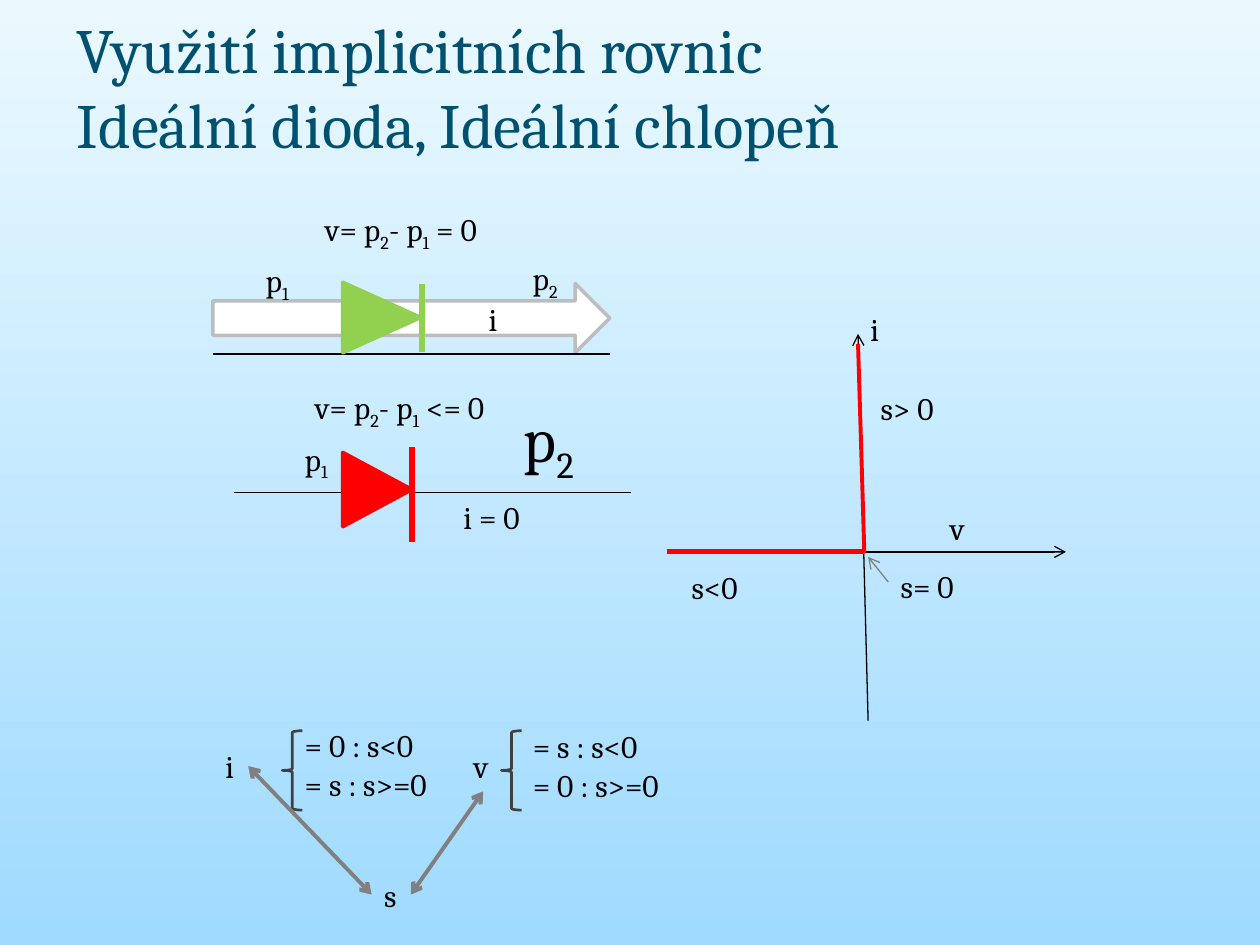
from lxml import etree
from pptx import Presentation
from pptx.dml.color import RGBColor
from pptx.enum.shapes import MSO_CONNECTOR, MSO_SHAPE
from pptx.enum.text import MSO_ANCHOR, MSO_AUTO_SIZE
from pptx.oxml.ns import qn
from pptx.util import Inches, Pt

FONT = "Cambria"
BLACK, GRAY, RED, GREEN = "000000", "808080", "FF0000", "92D050"
TOP, LEFT, BOTTOM, RIGHT = range(4)
TEXT_HEIGHT = 0.4

TITLE = "Využití implicitních rovnic \vIdeální dioda, Ideální chlopeň"

# text (an underscore lowers the next character), left, top, width, wrapped
LABELS = [
    ("p_1", 2.01, 2.02, 0.42, False),
    ("p_2", 4.13, 2.01, 0.44, False),
    ("i", 3.78, 2.33, 0.28, False),
    ("v= p_2- p_1 = 0", 2.48, 1.62, 1.6, False),
    ("p_1", 2.32, 3.44, 0.42, False),
    ("i = 0", 3.58, 3.9, 0.72, False),
    ("v= p_2- p_1 <= 0", 2.4, 3.03, 1.77, False),
    ("i", 6.81, 2.41, 0.55, True),
    ("v", 7.44, 3.99, 0.55, True),
    ("s<0", 5.39, 4.46, 1.65, True),
    ("s> 0", 6.89, 3.04, 1.65, True),
    ("s= 0", 7.05, 4.45, 1.65, True),
]

# left of brace, left, top and width of the text, the two cases
CASES = [
    (2.24, 2.32, 5.71, 1.34, ("= 0 : s<0", "= s : s>=0")),
    (3.98, 4.13, 5.72, 2.05, ("= s : s<0", "= 0 : s>=0")),
]
CASE_PITCH = 0.31

# start, end, colour, width, arrowhead at start, arrowhead at end
LINES = [
    ((1.69, 2.81), (4.84, 2.81), BLACK, 0.75, False, False),
    ((1.86, 3.91), (5.01, 3.91), BLACK, 0.75, False, False),
    ((3.27, 3.55), (3.27, 4.3), RED, 3, False, False),
    ((3.35, 2.25), (3.35, 2.79), GREEN, 3, False, False),
    ((6.81, 2.65), (6.89, 5.72), BLACK, 0.75, True, False),
    ((5.31, 4.38), (8.46, 4.38), BLACK, 0.75, False, True),
    ((5.29, 4.38), (6.86, 4.38), RED, 3, False, False),
    ((6.86, 4.39), (6.81, 2.73), RED, 2.25, False, False),
    ((7.05, 4.62), (6.89, 4.42), GRAY, 0.75, False, True),
]

# left, top, width, height before the quarter turn, colour
DIODES = [
    (2.75, 2.21, 0.56, 0.62, GREEN),
    (2.7, 3.61, 0.59, 0.55, RED),
]


def rgb(value):
    return RGBColor.from_string(value)


def add_shape(slide, kind, box, fill, line, width):
    shape = slide.shapes.add_shape(kind, *map(Inches, box))
    shape.shadow.inherit = False
    if fill:
        shape.fill.solid()
        shape.fill.fore_color.rgb = rgb(fill)
    else:
        shape.fill.background()
    shape.line.color.rgb = rgb(line)
    shape.line.width = Pt(width)
    return shape


def add_line(slide, start, end, color, width, head=False, tail=False):
    connector = slide.shapes.add_connector(
        MSO_CONNECTOR.STRAIGHT, *map(Inches, start + end))
    connector.line.color.rgb = rgb(color)
    connector.line.width = Pt(width)
    outline = connector.line._get_or_add_ln()
    for tag, wanted in (("a:headEnd", head), ("a:tailEnd", tail)):
        if wanted:
            etree.SubElement(outline, qn(tag), type="arrow")
    etree.SubElement(connector._element.spPr, qn("a:effectLst"))
    return connector


def add_text(slide, text, left, top, width, wrapped=True,
             height=TEXT_HEIGHT, size=18, color=BLACK):
    """Add a text box; an underscore makes the next character a subscript."""
    box = slide.shapes.add_textbox(*map(Inches, (left, top, width, height)))
    frame = box.text_frame
    frame.word_wrap = wrapped
    frame.auto_size = MSO_AUTO_SIZE.SHAPE_TO_FIT_TEXT
    paragraph = frame.paragraphs[0]
    first, *rest = text.split("_")
    paragraph.text = first
    for part in rest:
        subscript = paragraph.add_run()
        subscript.text = part[0]
        subscript.font._element.set("baseline", "-25000")
        if part[1:]:
            paragraph.add_run().text = part[1:]
    for run in paragraph.runs:
        run.font.name = FONT
        run.font.size = Pt(size)
        run.font.color.rgb = rgb(color)
    return box


def paint_background(slide):
    fill = slide.background.fill
    fill.gradient()
    fill.gradient_angle = 270
    for stop, color, position in zip(
            fill.gradient_stops, ("EBF9FF", "9FDAFF"), (0, 1)):
        stop.color.rgb = rgb(color)
        stop.position = position


def main():
    presentation = Presentation()
    presentation.slide_width, presentation.slide_height = Inches(10), Inches(7.5)
    slide = presentation.slides.add_slide(presentation.slide_layouts[6])
    paint_background(slide)

    title = add_text(slide, TITLE, 0.51, 0.13, 8.99,
                     height=1.1, size=36, color="005070")
    title.text_frame.auto_size = MSO_AUTO_SIZE.NONE
    title.text_frame.vertical_anchor = MSO_ANCHOR.MIDDLE

    add_shape(slide, MSO_SHAPE.RIGHT_ARROW, (1.69, 2.25, 3.15, 0.55),
              "FFFFFF", "BDBDBD", 2)
    for line in LINES:
        add_line(slide, *line)
    for *box, color in DIODES:
        diode = add_shape(slide, MSO_SHAPE.ISOSCELES_TRIANGLE, box,
                          color, color, 2)
        diode.rotation = 90
    for label in LABELS:
        add_text(slide, *label)
    add_text(slide, "p_2", 4.06, 3.12, 0.68, False, height=0.71, size=36)

    for brace_left, left, top, width, cases in CASES:
        add_shape(slide, MSO_SHAPE.LEFT_BRACE, (brace_left, 5.8, 0.16, 0.63),
                  None, "404040", 1.5)
        for row, case in enumerate(cases):
            add_text(slide, case, left, top + row * CASE_PITCH, width)

    current = add_text(slide, "i", 1.69, 5.88, 0.28, False)
    voltage = add_text(slide, "v", 3.66, 5.88, 0.35)
    parameter = add_text(slide, "s", 2.95, 6.9, 0.31, False)
    for source, source_side, start, end, end_side in (
            (current, RIGHT, (1.97, 6.08), (2.95, 7.1), LEFT),
            (voltage, BOTTOM, (3.83, 6.28), (3.26, 7.1), RIGHT)):
        link = add_line(slide, start, end, GRAY, 2.25, True, True)
        link.begin_connect(source, source_side)
        link.end_connect(parameter, end_side)

    presentation.save("out.pptx")


if __name__ == "__main__":
    main()
